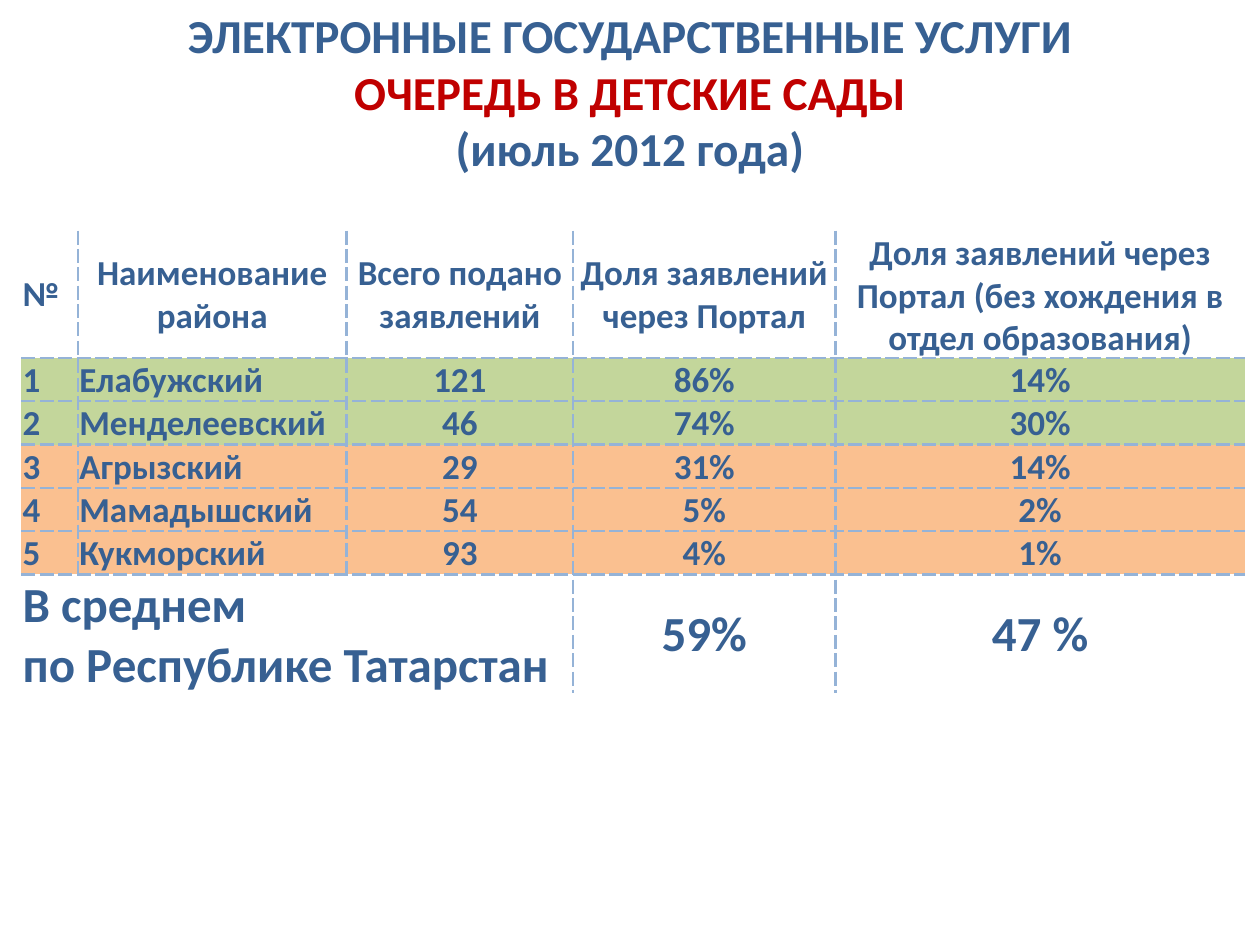
from lxml import etree
from pptx import Presentation
from pptx.dml.color import RGBColor
from pptx.enum.text import MSO_ANCHOR as Anchor, PP_ALIGN as Align
from pptx.oxml.ns import qn
from pptx.util import Inches, Pt

COLORS = {
    "text": "376092",
    "accent": "C00000",
    "line": "95B3D7",
    "high": "C3D69B",
    "low": "FAC090",
}
HEADING = [
    ("ЭЛЕКТРОННЫЕ ГОСУДАРСТВЕННЫЕ УСЛУГИ", "text"),
    ("ОЧЕРЕДЬ В ДЕТСКИЕ САДЫ", "accent"),
    ("(июль 2012 года)", "text"),
]
HEADERS = [
    "№",
    "Наименование района",
    "Всего подано заявлений",
    "Доля заявлений через Портал",
    "Доля заявлений через Портал (без хождения в отдел образования)",
]
DISTRICTS = [
    ("Елабужский", "121", "86%", "14%", "high"),
    ("Менделеевский", "46", "74%", "30%", "high"),
    ("Агрызский", "29", "31%", "14%", "low"),
    ("Мамадышский", "54", "5%", "2%", "low"),
    ("Кукморский", "93", "4%", "1%", "low"),
]
AVERAGE = ["В среднем\nпо Республике Татарстан", "", "", "59%", "47 %"]
COLUMN_WIDTHS = [0.45, 2.13, 1.8, 2.08, 3.25]
HEADER_HEIGHT = 0.88


def style_paragraph(paragraph, size, color, align):
    paragraph.alignment = align
    font = paragraph.font
    font.name = "Calibri"
    font.size = Pt(size)
    font.bold = True
    font.color.rgb = RGBColor.from_string(COLORS[color])


def add_heading(slide, left, top, width, height):
    frame = slide.shapes.add_textbox(
        Inches(left), Inches(top), Inches(width), Inches(height)
    ).text_frame
    frame.word_wrap = True
    frame.text = "\n".join(line for line, _ in HEADING)
    for paragraph, (_, color) in zip(frame.paragraphs, HEADING):
        style_paragraph(paragraph, 27, color, Align.CENTER)


def set_borders(cell, sides):
    properties = cell._tc.get_or_add_tcPr()
    for side, visible in sides.items():
        line = etree.SubElement(properties, qn(f"a:ln{side}"), w=str(Pt(1.5)))
        if visible:
            fill = etree.SubElement(line, qn("a:solidFill"))
            etree.SubElement(fill, qn("a:srgbClr"), val=COLORS["line"])
            etree.SubElement(line, qn("a:prstDash"), val="sysDash")
        else:
            etree.SubElement(line, qn("a:noFill"))


def fill_cell(cell, text, size, align, anchor, fill):
    cell.margin_left = cell.margin_right = cell.margin_top = Inches(0.01)
    cell.margin_bottom = 0
    cell.vertical_anchor = anchor
    cell.text = text
    for paragraph in cell.text_frame.paragraphs:
        style_paragraph(paragraph, size, "text", align)
    if fill:
        cell.fill.solid()
        cell.fill.fore_color.rgb = RGBColor.from_string(COLORS[fill])
    else:
        cell.fill.background()


def add_district_table(slide, left, top, width, height):
    numbered = [[str(i), *row[:-1]] for i, row in enumerate(DISTRICTS, 1)]
    rows = [HEADERS, *numbered, AVERAGE]
    fills = [None, *(row[-1] for row in DISTRICTS), None]
    last_row, last_column = len(rows) - 1, len(HEADERS) - 1
    table = slide.shapes.add_table(
        len(rows), len(HEADERS),
        Inches(left), Inches(top), Inches(width), Inches(height),
    ).table
    table.first_row = table.horz_banding = False
    for column, column_width in zip(table.columns, COLUMN_WIDTHS):
        column.width = Inches(column_width)
    for r, row in enumerate(table.rows):
        row.height = Inches(HEADER_HEIGHT if r == 0 else 0.29)

    for r, texts in enumerate(rows):
        for c, text in enumerate(texts):
            cell = table.cell(r, c)
            set_borders(cell, {
                "L": c > 0, "R": c < last_column,
                "T": r > 0, "B": r < last_row,
            })
            is_name = c == 1 and 0 < r < last_row
            fill_cell(
                cell, text,
                28 if r == last_row else 20,
                Align.LEFT if c == 0 or is_name else Align.CENTER,
                Anchor.BOTTOM if is_name else Anchor.MIDDLE,
                fills[r],
            )
    table.cell(last_row, 0).merge(table.cell(last_row, 2))


def main():
    presentation = Presentation()
    presentation.slide_width = Inches(10)
    presentation.slide_height = Inches(7.5)
    slide = presentation.slides.add_slide(presentation.slide_layouts[6])
    add_heading(slide, 0, 0, 10, 1.46)
    add_district_table(slide, 0.17, 1.83, sum(COLUMN_WIDTHS), 3.67)
    presentation.save("out.pptx")


if __name__ == "__main__":
    main()
